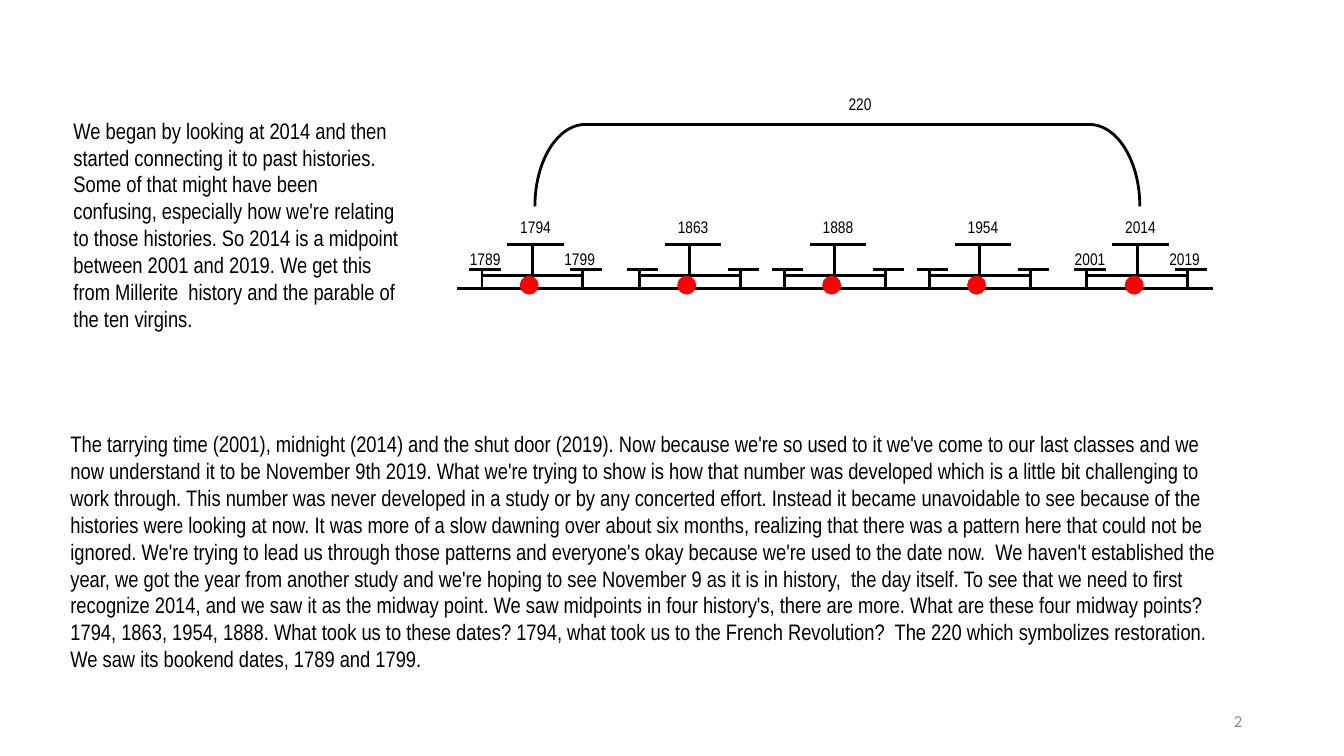
"""Build a slide with two paragraphs and a timeline of midpoint years."""
import pptx
import pptx.dml.color
import pptx.enum.shapes
import pptx.enum.text
import pptx.oxml
import pptx.util
import lxml.etree

COLORS = {"ink": "000000", "dot": "FF0000", "number": "8C8C8C"}
FONT = "Arial Narrow"
PERIODS = [
    (12, "1794", "1789", "1799"),
    (37, "1863", "", ""),
    (60, "1888", "", ""),
    (83, "1954", "", ""),
    (108, "2014", "2001", "2019"),
]
SPAN = "220"
PAGE = "2"
INTRO = [
    "We began by looking at 2014 and then started connecting it to past histories.",
    "Some of that might have been confusing, especially how we're relating to those histories.",
    "So 2014 is a midpoint between 2001 and 2019.",
    "We get this from Millerite  history and the parable of the ten virgins.",
]
BODY = [
    "The tarrying time (2001), midnight (2014) and the shut door (2019).",
    "Now because we're so used to it we've come to our last classes and we now understand",
    "it to be November 9th 2019.",
    "What we're trying to show is how that number was developed which is a little bit",
    "challenging to work through.",
    "This number was never developed in a study or by any concerted effort.",
    "Instead it became unavoidable to see because of the histories were looking at now.",
    "It was more of a slow dawning over about six months, realizing that there was a",
    "pattern here that could not be ignored.",
    "We're trying to lead us through those patterns and everyone's okay because we're used",
    "to the date now.  We haven't established the year, we got the year from another study",
    "and we're hoping to see November 9 as it is in history,  the day itself.",
    "To see that we need to first recognize 2014, and we saw it as the midway point.",
    "We saw midpoints in four history's, there are more.",
    "What are these four midway points? 1794, 1863, 1954, 1888.",
    "What took us to these dates? 1794, what took us to the French Revolution?  The 220",
    "which symbolizes restoration.",
    "We saw its bookend dates, 1789 and 1799.",
]

LEFT, TOP, UNIT = 4.53, 2.11, 1 / 16
CAP_ROW, POST_ROW, BAR_ROW, BASE_ROW = 5, 9, 10, 12
PERIOD_LINES = [
    (0, CAP_ROW, 0, BASE_ROW),
    (-4, CAP_ROW, 5, CAP_ROW),
    (8, POST_ROW, 8, BASE_ROW),
    (6, POST_ROW, 11, POST_ROW),
    (-8, POST_ROW, -8, BASE_ROW),
    (-10, POST_ROW, -5, POST_ROW),
    (-8, BAR_ROW, 8, BAR_ROW),
]
LABEL_PLACES = [(-4, 0, 5), (-12, CAP_ROW, 4), (3, CAP_ROW, 4)]
ALIGN = pptx.enum.text.PP_ALIGN
SHAPE = pptx.enum.shapes.MSO_SHAPE

prs = pptx.Presentation()
prs.slide_width = pptx.util.Inches(13.33)
prs.slide_height = pptx.util.Inches(7.5)
s = prs.slides.add_slide(prs.slide_layouts[6])


def color(name):
    return pptx.dml.color.RGBColor.from_string(COLORS[name])


def inches(*lengths):
    return [pptx.util.Inches(length) for length in lengths]


def grid(col, row):
    return inches(LEFT + col * UNIT, TOP + row * UNIT)


def size(cols, rows):
    return inches(cols * UNIT, rows * UNIT)


def add_text(box, text, points, font=FONT, ink="ink", align=ALIGN.LEFT, inset=None):
    sp = s.shapes.add_textbox(*box)
    tf = sp.text_frame
    tf.word_wrap = True
    if inset is not None:
        tf.margin_left = tf.margin_right = pptx.util.Inches(inset)
        tf.margin_top = tf.margin_bottom = pptx.util.Inches(inset)
    p = tf.paragraphs[0]
    p.text = text
    p.alignment = align
    p.font.name = font
    p.font.size = pptx.util.Pt(points)
    p.font.color.rgb = color(ink)
    return tf


def add_label(col, row, rows, text):
    add_text((*grid(col, row), *size(9, rows)), text, 12, align=ALIGN.CENTER, inset=0.04)


def add_line(col1, row1, col2, row2):
    ln = s.shapes.add_connector(
        pptx.enum.shapes.MSO_CONNECTOR.STRAIGHT, *grid(col1, row1), *grid(col2, row2))
    ln.line.color.rgb = color("ink")
    ln.line.width = pptx.util.Pt(2)
    lxml.etree.SubElement(ln._element.spPr, pptx.oxml.ns.qn("a:effectLst"))


def add_period(col, *years):
    for col1, row1, col2, row2 in PERIOD_LINES:
        add_line(col + col1, row1, col + col2, row2)
    for (offset, row, rows), year in zip(LABEL_PLACES, years):
        if year:
            add_label(col + offset, row, rows, year)
    dot = s.shapes.add_shape(SHAPE.OVAL, *grid(col - 2, BAR_ROW), *size(3, 3))
    dot.shadow.inherit = False
    dot.fill.solid()
    dot.fill.fore_color.rgb = color("dot")
    dot.line.fill.background()


def add_bracket(center_col, center_row, depth, span):
    sp = s.shapes.add_shape(
        SHAPE.LEFT_BRACKET,
        *grid(center_col - depth / 2, center_row - span / 2), *size(depth, span))
    sp.rotation = 90
    sp.adjustments[0] = 0.615
    sp.shadow.inherit = False
    sp.fill.background()
    sp.line.color.rgb = color("ink")
    sp.line.width = pptx.util.Pt(2)


tf = add_text(inches(9.42, 6.95, 3, 0.4), PAGE, 12, "Calibri", "number", ALIGN.RIGHT)
tf.vertical_anchor = pptx.enum.text.MSO_ANCHOR.MIDDLE
add_line(0, BASE_ROW, 120, BASE_ROW)
for period in PERIODS:
    add_period(*period)
for box, parts in [((0.6, 4.22, 11.72, 2.52), BODY), ((0.63, 1.11, 3.48, 2.26), INTRO)]:
    tf = add_text(inches(*box), " ".join(parts), 16)
    tf.auto_size = pptx.enum.text.MSO_AUTO_SIZE.SHAPE_TO_FIT_TEXT
add_bracket(60.4, -7.5, 13, 96)
add_label(59.5, -19.5, 5, SPAN)

prs.save("out.pptx")
